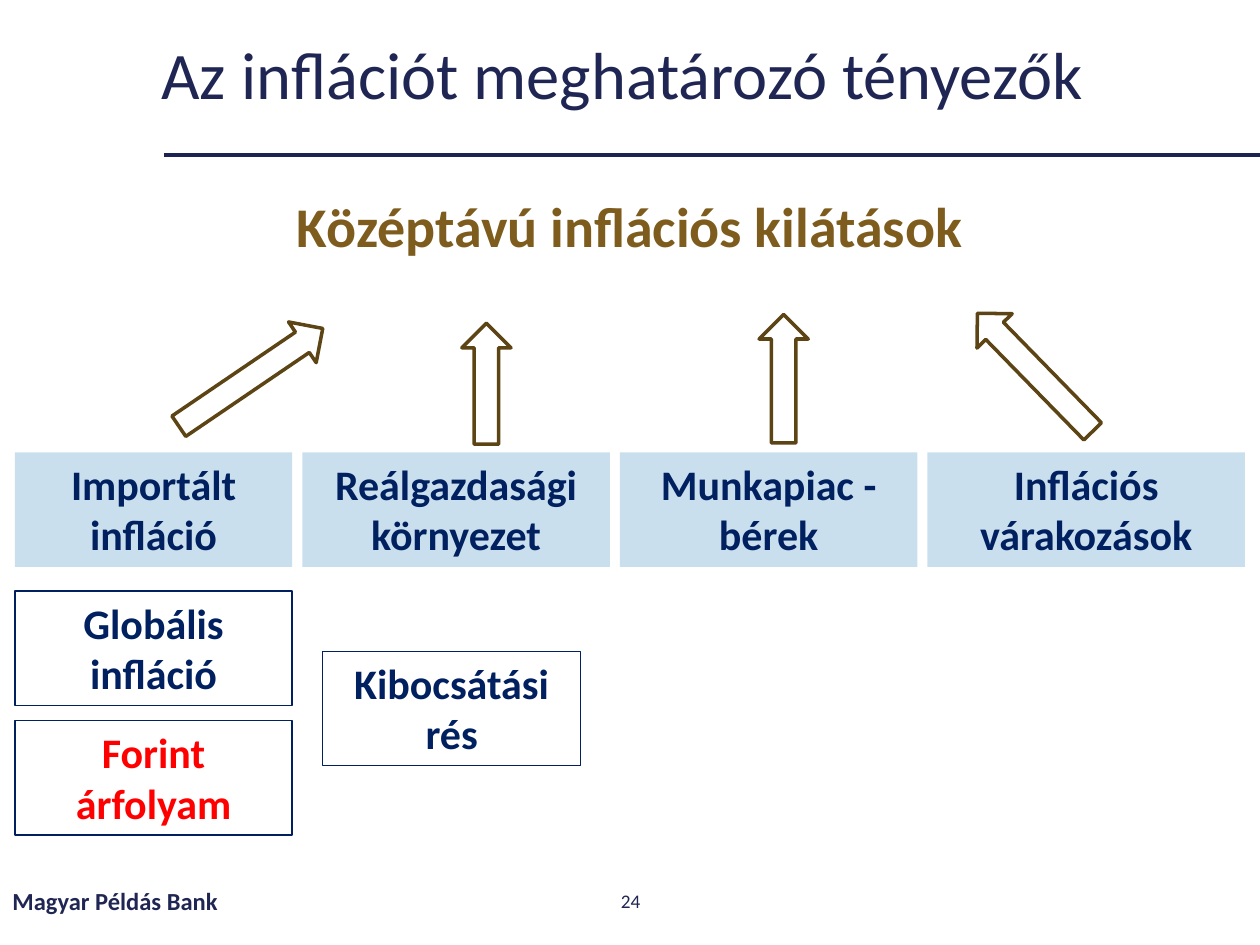
from pptx import Presentation
from pptx.dml.color import RGBColor
from pptx.enum.shapes import MSO_CONNECTOR, MSO_SHAPE
from pptx.enum.text import MSO_ANCHOR, MSO_AUTO_SIZE, PP_ALIGN
from pptx.oxml.ns import qn
from pptx.util import Pt
from lxml.etree import SubElement

FONT = "Calibri"
INK = RGBColor(0x20, 0x26, 0x53)
RULE = RGBColor(0x1E, 0x24, 0x52)
GOLD = RGBColor(0x7E, 0x5C, 0x1D)
BROWN = RGBColor(0x5D, 0x44, 0x15)
NAVY = RGBColor(0x00, 0x20, 0x60)
RED = RGBColor(0xFF, 0x00, 0x00)
PALE = RGBColor(0xCA, 0xDF, 0xEE)
WHITE = RGBColor(0xFF, 0xFF, 0xFF)

TITLE = "Az inflációt meghatározó tényezők"
OUTLOOK = "Középtávú inflációs kilátások"
FACTORS = [
    ("Importált infláció", 158.4),
    ("Reálgazdasági környezet", 175.7),
    ("Munkapiac - bérek", 169.9),
    ("Inflációs várakozások", 181.4),
]
DRIVERS = [
    ("Globális infláció", 8.6, 337.7, 158.4, NAVY),
    ("Forint árfolyam", 8.6, 411.8, 158.4, RED),
    ("Kibocsátási rés", 184.3, 372.2, 147.6, NAVY),
]
ARROWS = [
    (93.6, 201.6, 99.4, 325.8),
    (411.1, 202.3, 73.4, 270),
    (243.4, 205.2, 69.1, 270),
    (544.3, 198.7, 94.3, 225.7),
]
FOOTERS = [
    ("Magyar Példás Bank", 0, 243.4, 14, True, PP_ALIGN.LEFT),
    ("24", 279.4, 162, 11, False, PP_ALIGN.CENTER),
]
LEFT, GAP, FACTOR_TOP = 8.6, 5.8, 258.5
BOX_HEIGHT, ARROW_HEIGHT = 65.4, 28.1


def write(shape, text, size, color, bold=False, align=PP_ALIGN.CENTER, anchor=MSO_ANCHOR.TOP):
    frame = shape.text_frame
    frame.text = text
    frame.word_wrap = True
    frame.auto_size = MSO_AUTO_SIZE.NONE
    frame.vertical_anchor = anchor
    para = frame.paragraphs[0]
    para.alignment = align
    font = para.runs[0].font
    font.name, font.size, font.bold = FONT, Pt(size), bold
    font.color.rgb = color


def add_shape(page, kind, place, fill=None, line=None, line_width=0.75):
    shape = page.shapes.add_shape(kind, *map(Pt, place))
    shape.shadow.inherit = False
    if fill is None:
        shape.fill.background()
    else:
        shape.fill.solid()
        shape.fill.fore_color.rgb = fill
    if line is None:
        shape.line.fill.background()
    else:
        shape.line.color.rgb = line
        shape.line.width = Pt(line_width)
    return shape


def main():
    deck = Presentation()
    deck.slide_width, deck.slide_height = Pt(720), Pt(540)
    page = deck.slides.add_slide(deck.slide_layouts[5])

    rule = page.shapes.add_connector(MSO_CONNECTOR.STRAIGHT, Pt(93.6), Pt(88.5), Pt(720), Pt(88.5))
    rule.line.color.rgb = RULE
    rule.line.width = Pt(2.25)
    SubElement(rule._element.spPr, qn("a:effectLst"))

    title = page.shapes.title
    title.left, title.top, title.width, title.height = map(Pt, (85, 14.4, 589.7, 59.8))
    write(title, TITLE, 38, INK, align=PP_ALIGN.LEFT, anchor=MSO_ANCHOR.MIDDLE)
    title.text_frame.paragraphs[0].line_spacing = 0.9

    for text, left, width, size, bold, align in FOOTERS:
        box = page.shapes.add_textbox(Pt(left), Pt(500.4), Pt(width), Pt(28.8))
        write(box, text, size, INK, bold, align, MSO_ANCHOR.MIDDLE)

    outlook = add_shape(page, MSO_SHAPE.RECTANGLE, (133.2, 105.8, 453.6, 46.1), fill=WHITE)
    write(outlook, OUTLOOK, 32, GOLD, True)

    left = LEFT
    for text, width in FACTORS:
        box = add_shape(page, MSO_SHAPE.RECTANGLE, (left, FACTOR_TOP, width, BOX_HEIGHT), fill=PALE)
        write(box, text, 24, NAVY, True)
        left += width + GAP

    for text, left, top, width, color in DRIVERS:
        box = add_shape(page, MSO_SHAPE.RECTANGLE, (left, top, width, BOX_HEIGHT), line=NAVY)
        write(box, text, 24, color, True)

    for left, top, width, angle in ARROWS:
        place = (left, top, width, ARROW_HEIGHT)
        arrow = add_shape(page, MSO_SHAPE.RIGHT_ARROW, place, line=BROWN, line_width=2)
        arrow.rotation = angle

    deck.save("out.pptx")


if __name__ == "__main__":
    main()
